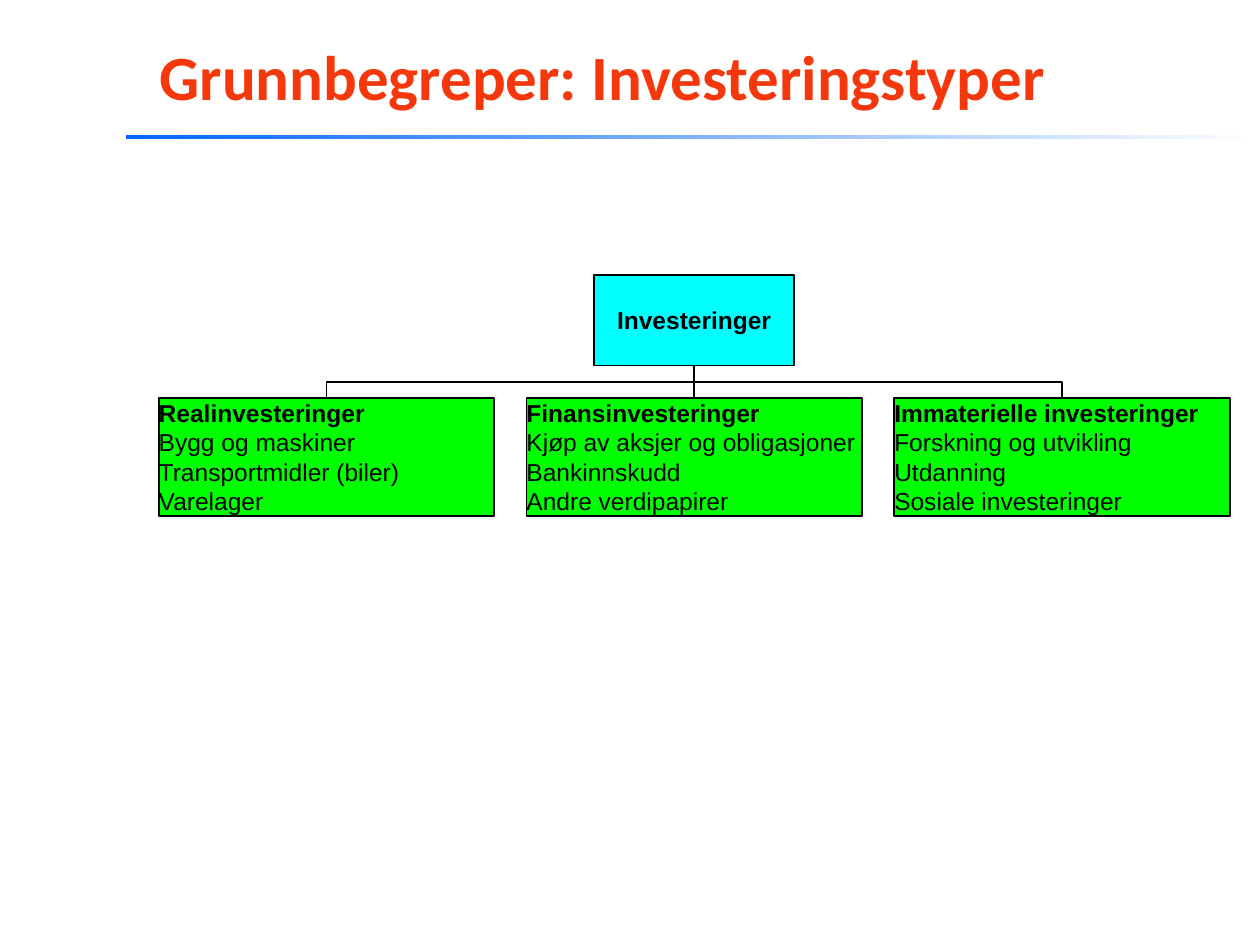
from dataclasses import dataclass

from lxml.etree import SubElement
from pptx import Presentation
from pptx.dml.color import RGBColor
from pptx.enum.shapes import MSO_CONNECTOR, MSO_SHAPE
from pptx.enum.text import MSO_ANCHOR, PP_ALIGN
from pptx.oxml.ns import qn
from pptx.util import Cm, Pt


@dataclass(frozen=True)
class Theme:
    """Colours, fonts and sizes of the slide."""
    title: RGBColor = RGBColor(0xF4, 0x38, 0x0C)
    rule: RGBColor = RGBColor(0x00, 0x66, 0xFF)
    white: RGBColor = RGBColor(0xFF, 0xFF, 0xFF)
    ink: RGBColor = RGBColor(0x00, 0x00, 0x00)
    root: RGBColor = RGBColor(0x00, 0xFF, 0xFF)
    branch: RGBColor = RGBColor(0x00, 0xFF, 0x00)
    title_font: str = "Calibri"
    body_font: str = "Arial"
    title_size: Pt = Pt(36)
    body_size: Pt = Pt(14)
    line: Pt = Pt(1)


THEME = Theme()
BRANCHES = [
    ["Realinvesteringer", "Bygg og maskiner", "Transportmidler (biler)", "Varelager"],
    ["Finansinvesteringer", "Kjøp av aksjer og obligasjoner", "Bankinnskudd",
     "Andre verdipapirer"],
    ["Immaterielle investeringer", "Forskning og utvikling", "Utdanning",
     "Sosiale investeringer"],
]


def style_font(font, name, size, color, bold):
    """Set the face, size, colour and weight of a font."""
    font.name, font.size, font.bold = name, size, bold
    font.color.rgb = color


def add_header(slide, left, top, width, height):
    """Place the title above a rule that fades to white."""
    rule_height = 0.08
    rule = slide.shapes.add_shape(MSO_SHAPE.RECTANGLE, Cm(left), Cm(top + height - rule_height),
                                  Cm(width), Cm(rule_height))
    rule.shadow.inherit = False
    rule.line.fill.background()
    rule.fill.gradient()
    rule.fill.gradient_angle = 0
    for stop, color in zip(rule.fill.gradient_stops, (THEME.rule, THEME.white)):
        stop.color.rgb = color

    indent = 0.43
    title = slide.shapes.add_textbox(Cm(left + indent), Cm(top), Cm(width - indent),
                                     Cm(height - rule_height))
    frame = title.text_frame
    frame.word_wrap = True
    frame.vertical_anchor = MSO_ANCHOR.MIDDLE
    heading = frame.paragraphs[0]
    heading.text = "Grunnbegreper: Investeringstyper"
    style_font(heading.font, THEME.title_font, THEME.title_size, THEME.title, True)


def add_node(slide, left, top, width, height, fill, lines, align):
    """Place an outlined box whose first line is bold."""
    node = slide.shapes.add_shape(MSO_SHAPE.RECTANGLE, Cm(left), Cm(top), Cm(width), Cm(height))
    node.shadow.inherit = False
    node.fill.solid()
    node.fill.fore_color.rgb = fill
    node.line.color.rgb = THEME.ink
    node.line.width = THEME.line
    frame = node.text_frame
    frame.word_wrap = False
    frame.vertical_anchor = MSO_ANCHOR.MIDDLE
    frame.margin_left = frame.margin_right = frame.margin_top = frame.margin_bottom = 0
    for index, line in enumerate(lines):
        paragraph = frame.paragraphs[0] if index == 0 else frame.add_paragraph()
        paragraph.text = line
        paragraph.alignment = align
        style_font(paragraph.font, THEME.body_font, THEME.body_size, THEME.ink, index == 0)


def add_link(slide, root_x, root_y, branch_x, branch_y):
    """Join root and branch; an elbow is turned 90 degrees to leave downwards."""
    if abs(branch_x - root_x) < 0.01:
        link = slide.shapes.add_connector(MSO_CONNECTOR.STRAIGHT, Cm(root_x), Cm(root_y),
                                          Cm(root_x), Cm(branch_y))
    else:
        mid_x, mid_y = (root_x + branch_x) / 2, (root_y + branch_y) / 2
        half_run, half_drop = (branch_x - root_x) / 2, (branch_y - root_y) / 2
        link = slide.shapes.add_connector(
            MSO_CONNECTOR.ELBOW, Cm(mid_x - half_drop), Cm(mid_y + half_run),
            Cm(mid_x + half_drop), Cm(mid_y - half_run))
        link._element.spPr.find(qn("a:xfrm")).set("rot", str(90 * 60000))
    link.line.color.rgb = THEME.ink
    link.line.width = THEME.line
    SubElement(link._element.spPr, qn("a:effectLst"))


def add_tree(slide, left, top, width, height):
    """Place the root box centred over one evenly spaced box per branch."""
    root_width, root_height, gap = 4.04, 1.83, 0.65
    branch_width = (width - gap * (len(BRANCHES) - 1)) / len(BRANCHES)
    branch_top = top + root_height + gap
    root_x = left + width / 2
    lefts = [left + index * (branch_width + gap) for index in range(len(BRANCHES))]
    for branch_left in lefts:
        add_link(slide, root_x, top + root_height, branch_left + branch_width / 2, branch_top)
    add_node(slide, root_x - root_width / 2, top, root_width, root_height,
             THEME.root, ["Investeringer"], PP_ALIGN.CENTER)
    for branch_left, lines in zip(lefts, BRANCHES):
        add_node(slide, branch_left, branch_top, branch_width, height - root_height - gap,
                 THEME.branch, lines, PP_ALIGN.LEFT)


def main():
    """Build and save the slide."""
    deck = Presentation()
    deck.slide_width, deck.slide_height = Cm(25.4), Cm(19.05)
    slide = deck.slides.add_slide(deck.slide_layouts[6])
    add_header(slide, 2.54, 0.33, 22.86, 2.47)
    add_tree(slide, 3.2, 5.54, 21.59, 4.86)
    deck.save("out.pptx")


if __name__ == "__main__":
    main()
